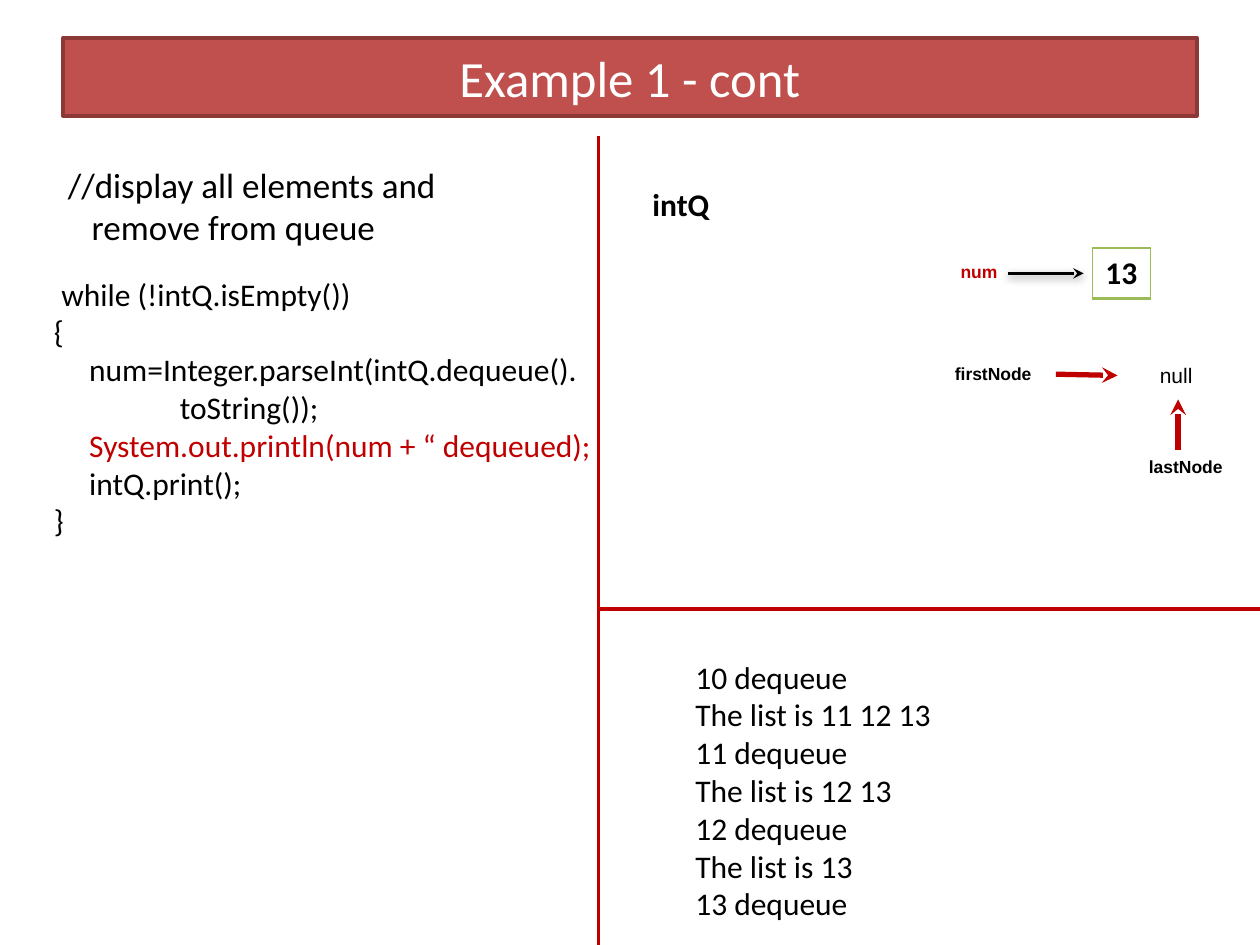
import pptx
import pptx.dml.color
import pptx.enum.shapes
import pptx.enum.text
import pptx.oxml.ns
import pptx.util
from lxml import etree

Inches = pptx.util.Inches
Pt = pptx.util.Pt
ALIGN = pptx.enum.text.PP_ALIGN
qn = pptx.oxml.ns.qn

RED, BLACK, WHITE, GREEN = "C00000", "000000", "FFFFFF", "9BBB59"


def rgb(color):
    return pptx.dml.color.RGBColor.from_string(color)


class QueueSlide:
    """Holds the style and the slide being drawn."""

    body_font = "Calibri"
    label_font = "Arial"

    def __init__(self, slide):
        self.slide = slide

    def style(self, paragraph, size, color=BLACK, font=None, bold=False,
              align=ALIGN.LEFT):
        paragraph.alignment = align
        paragraph.font.size = Pt(size)
        paragraph.font.name = font or self.body_font
        paragraph.font.bold = bold
        paragraph.font.color.rgb = rgb(color)

    def title(self, text, left, top, width, height):
        banner = self.slide.shapes.add_shape(
            pptx.enum.shapes.MSO_SHAPE.RECTANGLE,
            Inches(left), Inches(top), Inches(width), Inches(height))
        banner.shadow.inherit = False
        banner.fill.solid()
        banner.fill.fore_color.rgb = rgb("C0504D")
        banner.line.color.rgb = rgb("8C3836")
        banner.line.width = Pt(2)
        banner.text_frame.vertical_anchor = pptx.enum.text.MSO_ANCHOR.MIDDLE
        paragraph = banner.text_frame.paragraphs[0]
        paragraph.text = text
        self.style(paragraph, 29, WHITE, align=ALIGN.CENTER)

    def text(self, lines, left, top, width, height, size=18, **style):
        """Each line is (text, left margin, first-line indent, color)."""
        frame = self.slide.shapes.add_textbox(
            Inches(left), Inches(top), Inches(width), Inches(height)).text_frame
        frame.word_wrap = True
        for index, (text, margin, indent, color) in enumerate(lines):
            paragraph = frame.add_paragraph() if index else frame.paragraphs[0]
            paragraph.text = text
            self.style(paragraph, size, color, **style)
            if margin or indent:
                properties = paragraph._p.get_or_add_pPr()
                properties.set("marL", str(Inches(margin)))
                properties.set("indent", str(Inches(indent)))

    def label(self, text, left, top, width, height, size=10, color=BLACK,
              bold=True, **style):
        self.text([(text, 0, 0, color)], left, top, width, height, size,
                  bold=bold, **style)

    def line(self, start, end, color=RED, width=2.25, arrow=False, shadow=False):
        connector = self.slide.shapes.add_connector(
            pptx.enum.shapes.MSO_CONNECTOR.STRAIGHT,
            *(Inches(value) for value in (*start, *end)))
        connector.line.color.rgb = rgb(color)
        connector.line.width = Pt(width)
        properties = connector.element.spPr
        if arrow:
            etree.SubElement(properties.find(qn("a:ln")), qn("a:tailEnd"),
                             type="stealth")
        effects = etree.SubElement(properties, qn("a:effectLst"))
        if shadow:
            outer = etree.SubElement(
                effects, qn("a:outerShdw"), blurRad=str(Pt(5)),
                dist=str(Pt(1.6)), dir="5400000", rotWithShape="0")
            shade = etree.SubElement(outer, qn("a:srgbClr"), val=BLACK)
            etree.SubElement(shade, qn("a:alpha"), val="38000")

    def node(self, value, left, top, width, height):
        table = self.slide.shapes.add_table(
            1, 1, Inches(left), Inches(top), Inches(width), Inches(height)).table
        table.first_row = table.horz_banding = False
        cell = table.cell(0, 0)
        properties = cell._tc.get_or_add_tcPr()
        for side, weight in (("L", 1), ("R", 1), ("T", 1), ("B", 2)):
            border = etree.SubElement(properties, qn(f"a:ln{side}"),
                                      w=str(Pt(weight)))
            fill = etree.SubElement(border, qn("a:solidFill"))
            etree.SubElement(fill, qn("a:srgbClr"), val=GREEN)
        cell.fill.background()
        paragraph = cell.text_frame.paragraphs[0]
        paragraph.text = value
        self.style(paragraph, 18, bold=True, align=ALIGN.CENTER)


def main():
    presentation = pptx.Presentation()
    presentation.slide_width = Inches(10)
    presentation.slide_height = Inches(7.5)
    page = QueueSlide(presentation.slides.add_slide(presentation.slide_layouts[6]))
    arial = page.label_font

    # Title and dividers
    page.title("Example 1 - cont", 0.5, 0.3, 9, 0.62)
    page.line((4.75, 1.08), (4.75, 7.5))
    page.line((4.75, 4.83), (10, 4.83))

    # Code
    page.text([("//display all elements and remove from queue", 0.38, -0.19, BLACK)],
              0.25, 1.25, 3.5, 0.5, size=20)
    page.text([
        ("while (!intQ.isEmpty())", 0.06, 0, BLACK),
        ("{", 0, 0, BLACK),
        ("num=Integer.parseInt(intQ.dequeue().", 0.28, 0, BLACK),
        ("toString());", 1, 0, BLACK),
        ("System.out.println(num + “ dequeued);", 0.28, 0, RED),
        ("intQ.print();", 0.28, 0, BLACK),
        ("}", 0, 0, BLACK),
    ], 0.33, 2.13, 4.54, 2.52)

    # Queue state
    page.label("intQ", 5.08, 1.42, 0.75, 0.4, size=18)
    page.label("num", 7.42, 2.02, 0.7, 0.27, color=RED, font=arial,
               align=ALIGN.CENTER)
    page.line((8, 2.17), (8.6, 2.17), BLACK, 2, arrow=True, shadow=True)
    page.node("13", 8.67, 1.97, 0.46, 0.4)
    page.label("null", 9, 2.83, 0.67, 0.3, size=12, bold=False, font=arial,
               align=ALIGN.CENTER)
    page.label("firstNode", 7.48, 2.83, 0.95, 0.27, font=arial)
    page.line((8.38, 2.97), (8.87, 2.98), width=3, arrow=True)
    page.label("lastNode", 9.02, 3.57, 0.95, 0.27, font=arial)
    page.line((9.35, 3.57), (9.35, 3.17), width=3, arrow=True)

    # Program output
    output = ["10 dequeue", "The list is 11 12 13", "11 dequeue",
              "The list is 12 13", "12 dequeue", "The list is 13", "13 dequeue"]
    page.text([(line, 0, 0, BLACK) for line in output], 5.42, 5.17, 2.15, 2.52)

    presentation.save("out.pptx")


if __name__ == "__main__":
    main()
